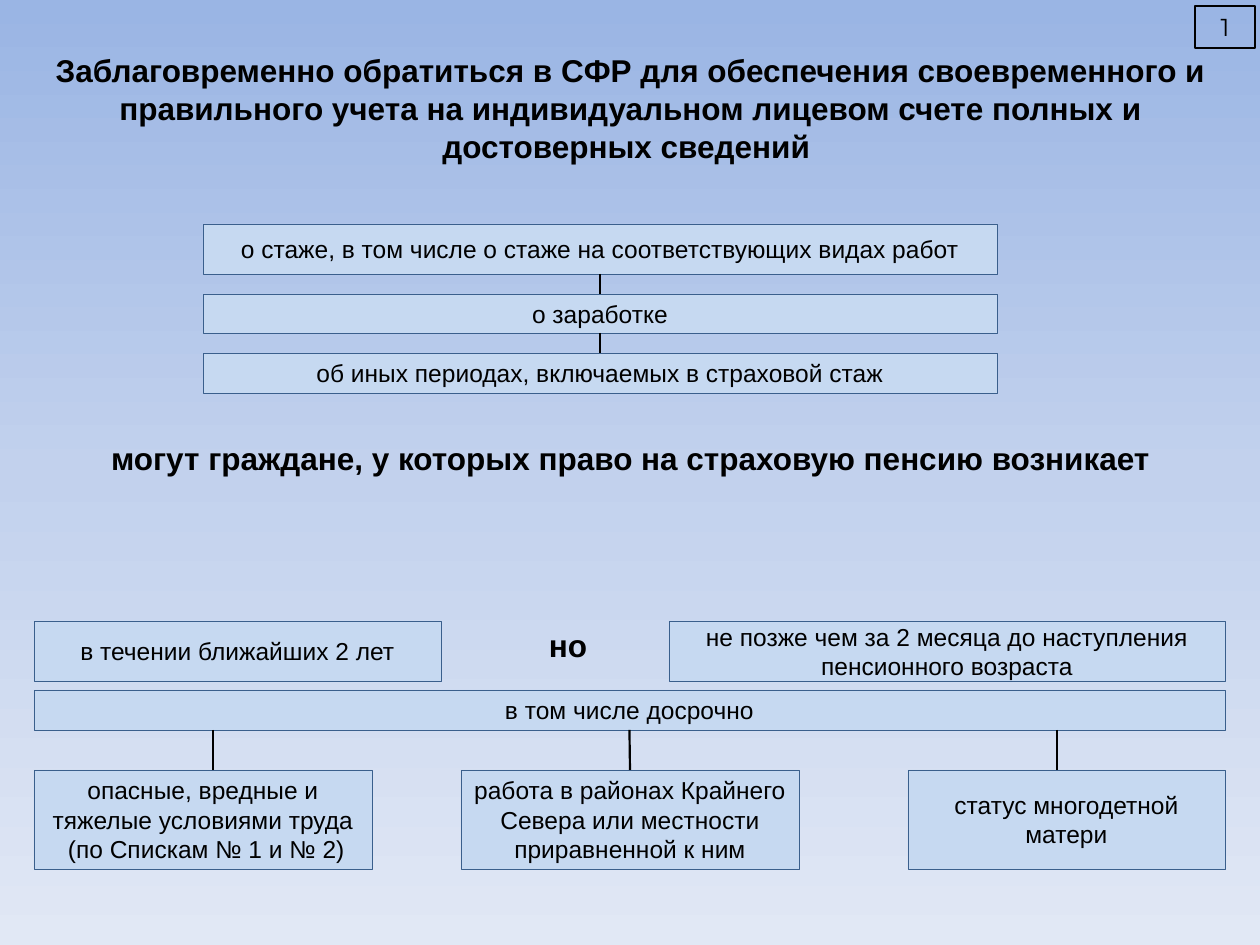
from copy import deepcopy
from typing import NamedTuple, Optional

from pptx import Presentation
from pptx import util as u
from pptx.dml.color import RGBColor
from pptx.enum import shapes, text
from pptx.oxml import ns, xmlchemy

EMU_PER_PX = u.Inches(1) / 126
COLORS = {
    "sky_top": "9AB5E4", "sky_middle": "C2D1ED", "sky_bottom": "E1E8F5",
    "panel": "C6D9F1", "border": "3A5F8C", "ink": "000000",
}


class Panel(NamedTuple):
    left: int
    top: int
    width: int
    height: int
    lines: tuple[str, ...]


class Heading(NamedTuple):
    left: int
    top: int
    width: int
    height: int
    words: str


STACK_LEFT, STACK_WIDTH = 203, 794
STACK = [
    Panel(STACK_LEFT, top, STACK_WIDTH, height, (words,))
    for top, height, words in [
        (224, 50, "о стаже, в том числе о стаже на соответствующих видах работ"),
        (294, 39, "о заработке"),
        (353, 40, "об иных периодах, включаемых в страховой стаж"),
    ]
]
TERMS = [
    Panel(34, 621, 407, 60, ("в течении ближайших 2 лет",)),
    Panel(669, 621, 556, 60,
          ("не позже чем за 2 месяца до наступления пенсионного возраста",)),
]
EARLY = Panel(34, 690, 1191, 40, ("в том числе досрочно",))
REASON_TOP, REASON_HEIGHT = 770, 99
HAZARD, NORTH, MOTHER = [
    Panel(left, REASON_TOP, width, REASON_HEIGHT, lines)
    for left, width, lines in [
        (34, 338, ("опасные, вредные и тяжелые условиями труда",
                   " (по Спискам № 1 и № 2)")),
        (461, 338, ("работа в районах Крайнего Севера или местности "
                    "приравненной к ним",)),
        (908, 317, ("статус многодетной матери",)),
    ]
]
SIDE_LINE_XS = (213, 1057)
HEADINGS = [
    Heading(35, 45, 1191, 127,
            "Заблаговременно обратиться в СФР для обеспечения своевременного и "
            "правильного учета на индивидуальном лицевом счете полных и "
            "достоверных сведений "),
    Heading(35, 433, 1191, 50,
            "могут граждане, у которых право на страховую пенсию возникает"),
    Heading(253, 620, 630, 50, "но"),
]
PAGE_NUMBER = Panel(1195, 6, 60, 42, ("1",))


def px(length: int) -> int:
    return round(length * EMU_PER_PX)


def color(name: str) -> RGBColor:
    return RGBColor.from_string(COLORS[name])


def write(box, lines: tuple[str, ...], *, size: int = 14, font: str = "Arial",
          bold: bool = False, anchor=text.MSO_ANCHOR.MIDDLE, grow: bool = False) -> None:
    frame = box.text_frame
    frame.word_wrap = True
    frame.vertical_anchor = anchor
    if grow:
        frame.auto_size = text.MSO_AUTO_SIZE.SHAPE_TO_FIT_TEXT
    for index, line in enumerate(lines):
        para = frame.add_paragraph() if index else frame.paragraphs[0]
        para.alignment = text.PP_ALIGN.CENTER
        span = para.add_run()
        span.text = line
        span.font.name = font
        span.font.size = u.Pt(size)
        span.font.bold = bold
        span.font.color.rgb = color("ink")


def add_panel(page, panel: Panel, *, fill: Optional[str] = "panel",
              border: str = "border", weight: float = 0.25, **text_format):
    box = page.shapes.add_shape(shapes.MSO_SHAPE.RECTANGLE, *map(px, panel[:4]))
    box.shadow.inherit = False
    if fill:
        box.fill.solid()
        box.fill.fore_color.rgb = color(fill)
    else:
        box.fill.background()
    box.line.color.rgb = color(border)
    box.line.width = u.Pt(weight)
    write(box, panel.lines, **text_format)
    return box


def add_line(page, x: int = 0, top: int = 0, bottom: int = 0):
    line = page.shapes.add_connector(
        shapes.MSO_CONNECTOR.STRAIGHT, px(x), px(top), px(x), px(bottom))
    line.line.color.rgb = color("ink")
    line.line.width = u.Pt(1.25)
    line._element.spPr.append(xmlchemy.OxmlElement("a:effectLst"))
    return line


def join_down(page, upper, lower) -> None:
    """Link the bottom middle of one box to the top middle of another."""
    line = add_line(page)
    line.begin_connect(upper, 2)
    line.end_connect(lower, 0)


def paint_background(page) -> None:
    fill = page.background.fill
    fill.gradient()
    fill.gradient_angle = 270
    stop_list = next(page.element.iter(ns.qn("a:gsLst")))
    stop_list.insert(1, deepcopy(stop_list[0]))
    sky = zip(fill.gradient_stops, (0, 0.5, 1), ("sky_top", "sky_middle", "sky_bottom"))
    for stop, position, name in sky:
        stop.position = position
        stop.color.rgb = color(name)


def main() -> None:
    deck = Presentation()
    deck.slide_width, deck.slide_height = u.Inches(10), u.Inches(7.5)
    page = deck.slides.add_slide(deck.slide_layouts[6])
    paint_background(page)

    stack = [add_panel(page, panel) for panel in STACK]
    for upper, lower in zip(stack, stack[1:]):
        join_down(page, upper, lower)

    for panel in (*TERMS, HAZARD, MOTHER):
        add_panel(page, panel)
    join_down(page, add_panel(page, EARLY), add_panel(page, NORTH))
    for x in SIDE_LINE_XS:
        add_line(page, x, EARLY.top + EARLY.height, REASON_TOP)

    for heading in HEADINGS:
        box = page.shapes.add_textbox(*map(px, heading[:4]))
        write(box, (heading.words,), size=18, bold=True,
              anchor=text.MSO_ANCHOR.TOP, grow=True)
    add_panel(page, PAGE_NUMBER, fill=None, border="ink", weight=0.75,
              font="Montserrat", anchor=text.MSO_ANCHOR.TOP, grow=True)

    deck.save("out.pptx")


if __name__ == "__main__":
    main()
